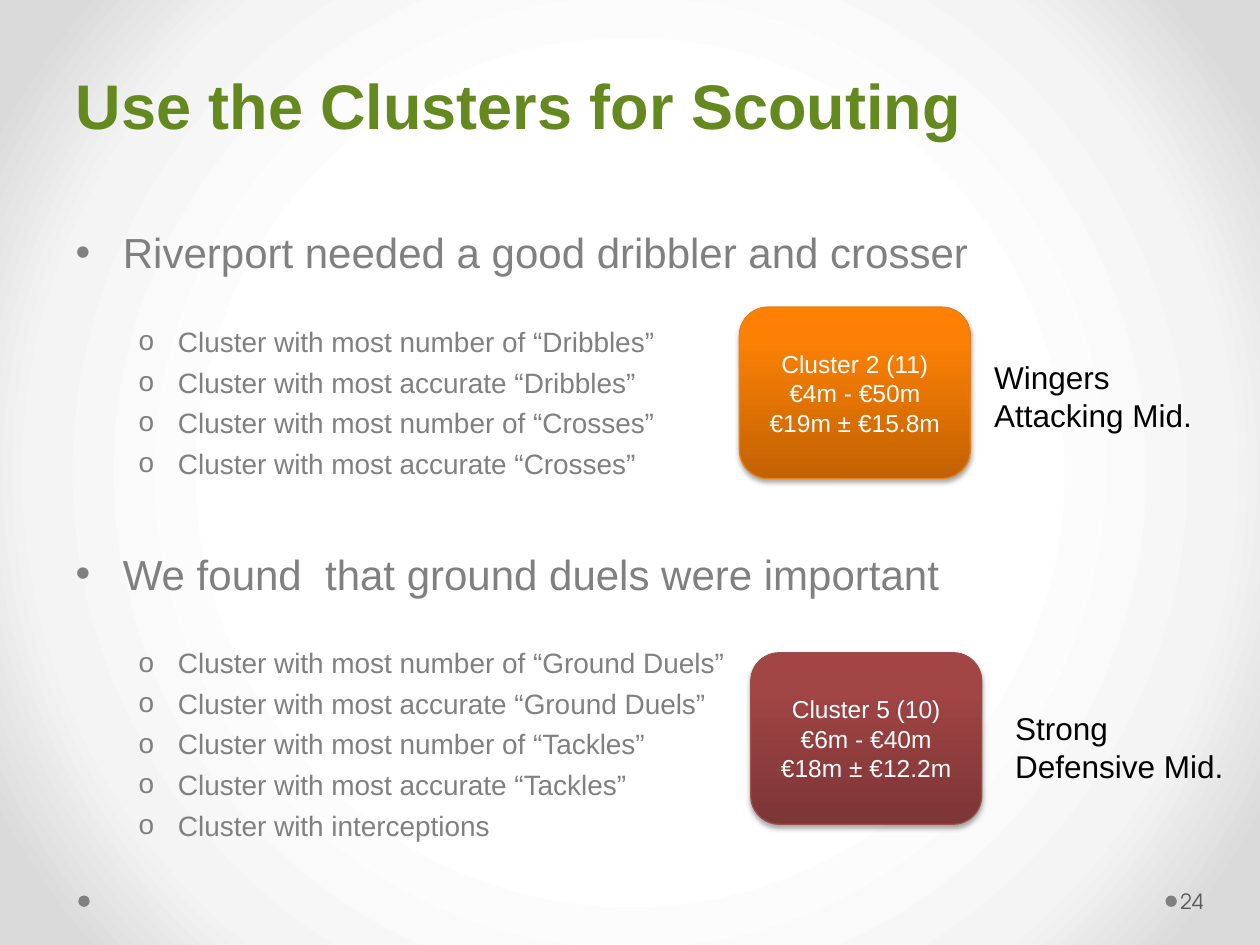
from lxml import etree
from pptx import Presentation
from pptx.dml.color import RGBColor
from pptx.enum.shapes import MSO_SHAPE
from pptx.enum.text import MSO_ANCHOR, MSO_AUTO_SIZE, PP_ALIGN
from pptx.oxml import parse_xml
from pptx.oxml.ns import nsdecls, qn
from pptx.util import Pt

ROUNDED, OVAL = MSO_SHAPE.ROUNDED_RECTANGLE, MSO_SHAPE.OVAL
MIDDLE, BOTTOM = MSO_ANCHOR.MIDDLE, MSO_ANCHOR.BOTTOM
LEFT, CENTER = PP_ALIGN.LEFT, PP_ALIGN.CENTER
NO_FIT = MSO_AUTO_SIZE.NONE

FONT, NUMBER_FONT = "Arial", "TeX Gyre Adventor"
COLORS = {
    "title": "63891F", "body": "808080", "label": "000000",
    "white": "FFFFFF", "number": "595959", "shadow": "000000",
    "orange line": "E6811C", "red line": "9A4E4E",
}
BACKGROUND = [(0, "FFFFFF"), (50, "FFFFFF"), (76, "F4F4F4"), (92, "DADADA"), (100, "DADADA")]
ORANGE = [(0, "C26203"), (80, "FB8004"), (100, "FF8002")]
RED = [(0, "7D3535"), (80, "A24545"), (100, "A44343")]

TOPICS = [
    ("Riverport needed a good dribbler and crosser", [
        "Cluster with most number of “Dribbles”",
        "Cluster with most accurate “Dribbles”",
        "Cluster with most number of “Crosses”",
        "Cluster with most accurate “Crosses”",
    ]),
    ("We found  that ground duels were important", [
        "Cluster with most number of “Ground Duels”",
        "Cluster with most accurate “Ground Duels”",
        "Cluster with most number of “Tackles”",
        "Cluster with most accurate “Tackles”",
        "Cluster with interceptions",
    ]),
]


def place(shape, box):
    shape.left, shape.top, shape.width, shape.height = (Pt(value) for value in box)


def format_runs(para, size, color, font=FONT, bold=False):
    for span in para.runs:
        span.font.name, span.font.size, span.font.bold = font, Pt(size), bold
        span.font.color.rgb = RGBColor.from_string(COLORS[color])


def gradient(stops, direction):
    """Return a gradFill element; direction is its a:lin or a:path child."""
    marks = "".join(
        f'<a:gs pos="{pos * 1000}"><a:srgbClr val="{color}"/></a:gs>' for pos, color in stops)
    return parse_xml(f'<a:gradFill {nsdecls("a")} rotWithShape="1">'
                     f"<a:gsLst>{marks}</a:gsLst>{direction}</a:gradFill>")


def replace_solid_fill(properties, fill):
    properties.replace(properties.find(qn("a:solidFill")), fill)


def paint_background(page):
    page.background.fill.solid()
    properties = page.element.xpath("p:cSld/p:bg/p:bgPr")[0]
    center = '<a:path path="circle"><a:fillToRect l="50000" t="50000" r="50000" b="50000"/></a:path>'
    replace_solid_fill(properties, gradient(BACKGROUND, center))


def add_title(page, box, text):
    title = page.shapes.title
    place(title, box)
    frame = title.text_frame
    frame.text = text
    frame.auto_size, frame.vertical_anchor = NO_FIT, BOTTOM
    para = frame.paragraphs[0]
    para.alignment, para.line_spacing = LEFT, Pt(58)
    format_runs(para, 36, "title", bold=True)


def format_bullet(para, mark, margin, hanging, size, gap):
    properties = para._p.get_or_add_pPr()
    properties.set("marL", str(Pt(margin)))
    properties.set("indent", str(-Pt(hanging)))
    etree.SubElement(properties, qn("a:buFont"), typeface=FONT)
    etree.SubElement(properties, qn("a:buChar"), char=mark)
    para.space_before = Pt(gap)
    format_runs(para, size, "body")


def add_topics(page, box, topics):
    body = page.placeholders[1]
    place(body, box)
    frame = body.text_frame
    frame.auto_size = NO_FIT
    for number, (heading, points) in enumerate(topics):
        para = frame.add_paragraph() if number else frame.paragraphs[0]
        para.text = heading
        format_bullet(para, "•", 27, 27, 24, 39 if number else 4)
        for index, point in enumerate(points):
            para = frame.add_paragraph()
            para.text, para.level = point, 1
            format_bullet(para, "o", 58.5, 22.5, 16, 4 if index else 27)


def add_cluster_card(page, box, lines, stops, line_color):
    card = page.shapes.add_shape(ROUNDED, *(Pt(value) for value in box))
    card.fill.solid()
    replace_solid_fill(card._element.spPr, gradient(stops, '<a:lin ang="16200000" scaled="0"/>'))
    card.line.color.rgb = RGBColor.from_string(COLORS[line_color])
    card.line.width = Pt(0.75)
    card._element.spPr.append(parse_xml(
        f'<a:effectLst {nsdecls("a")}><a:outerShdw blurRad="{Pt(3.1)}" dist="{Pt(1.8)}" '
        f'dir="5400000" rotWithShape="0"><a:srgbClr val="{COLORS["shadow"]}">'
        '<a:alpha val="35000"/></a:srgbClr></a:outerShdw></a:effectLst>'))
    frame = card.text_frame
    frame.text = "\n".join(lines)
    frame.vertical_anchor = MIDDLE
    for para in frame.paragraphs:
        para.alignment = CENTER
        format_runs(para, 14, "white")


def add_label(page, box, lines):
    frame = page.shapes.add_textbox(*(Pt(value) for value in box)).text_frame
    frame.text = "\n".join(lines)
    frame.word_wrap = False
    for para in frame.paragraphs:
        format_runs(para, 18, "label")


def add_footer(page, box, number):
    """Place a dot at each end of the box, and the page number after the right one."""
    left, top, width, height = box
    dot_size = 6.5
    dot_top = top + (height - dot_size) / 2
    for dot_left in (left, left + width - dot_size):
        dot = page.shapes.add_shape(OVAL, Pt(dot_left), Pt(dot_top), Pt(dot_size), Pt(dot_size))
        dot.shadow.inherit = False
        dot.fill.solid()
        dot.fill.fore_color.rgb = RGBColor.from_string(COLORS["body"])
        dot.line.fill.background()
    frame = page.shapes.add_textbox(Pt(left + width), Pt(top), Pt(44), Pt(height)).text_frame
    frame.text = number
    frame.word_wrap, frame.vertical_anchor = True, MIDDLE
    frame.margin_left = Pt(2)
    format_runs(frame.paragraphs[0], 12, "number", NUMBER_FONT)


def main():
    deck = Presentation()
    deck.slide_width, deck.slide_height = Pt(720), Pt(540)
    page = deck.slides.add_slide(deck.slide_layouts[1])
    paint_background(page)
    add_title(page, (36, 0, 648, 85), "Use the Clusters for Scouting")
    add_topics(page, (36, 126, 648, 374.4), TOPICS)
    add_cluster_card(page, (422.5, 175.5, 132, 98),
                     ["Cluster 2 (11)", "€4m - €50m", "€19m ± €15.8m"], ORANGE, "orange line")
    add_cluster_card(page, (429, 373, 132, 98),
                     ["Cluster 5 (10)", "€6m - €40m", "€18m ± €12.2m"], RED, "red line")
    add_label(page, (561, 201, 129.6, 51), ["Wingers", "Attacking Mid."])
    add_label(page, (573, 401.5, 134.6, 51), ["Strong", "Defensive Mid."])
    add_footer(page, (44.75, 500.5, 627.75, 29), "24")
    deck.save("out.pptx")


if __name__ == "__main__":
    main()
